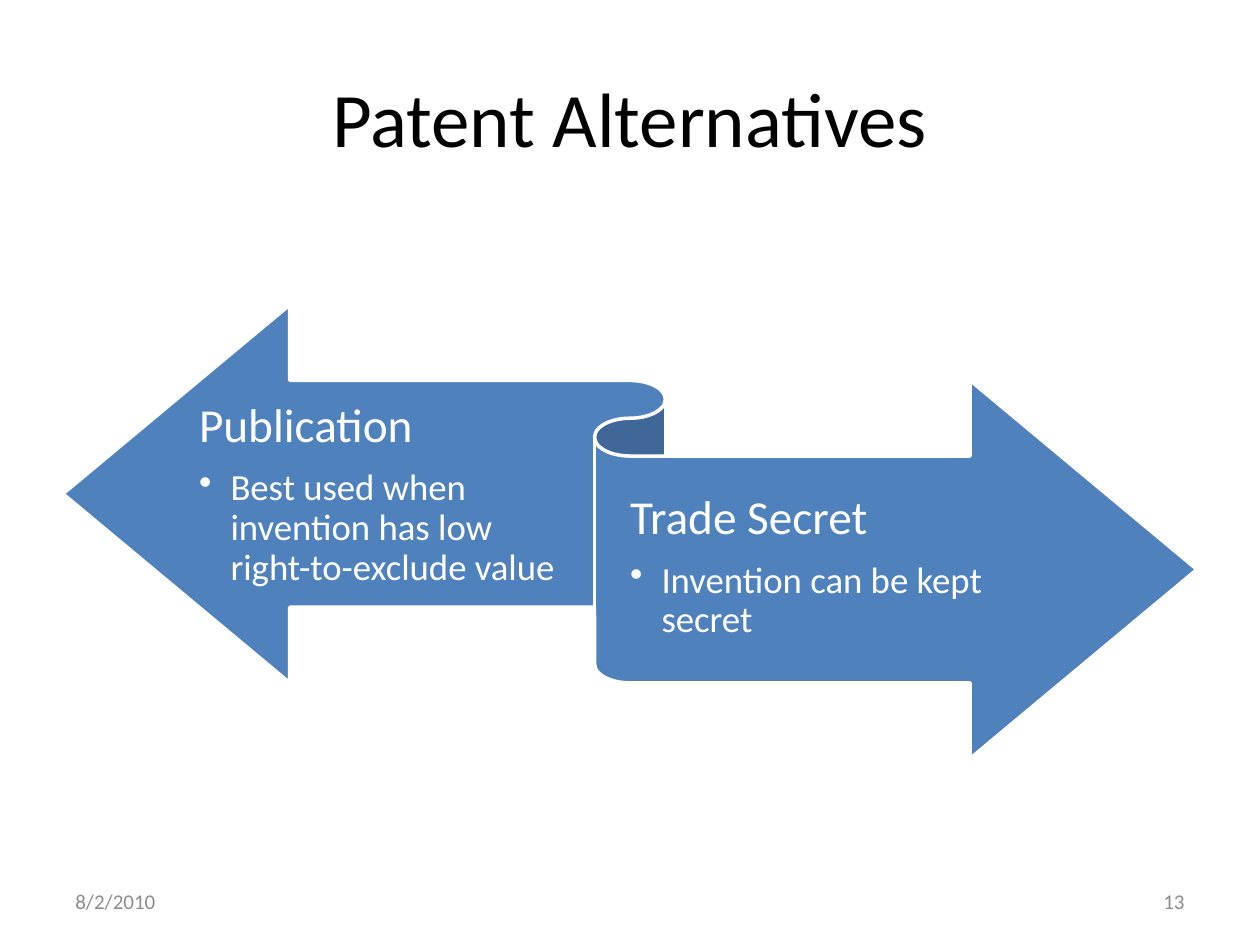
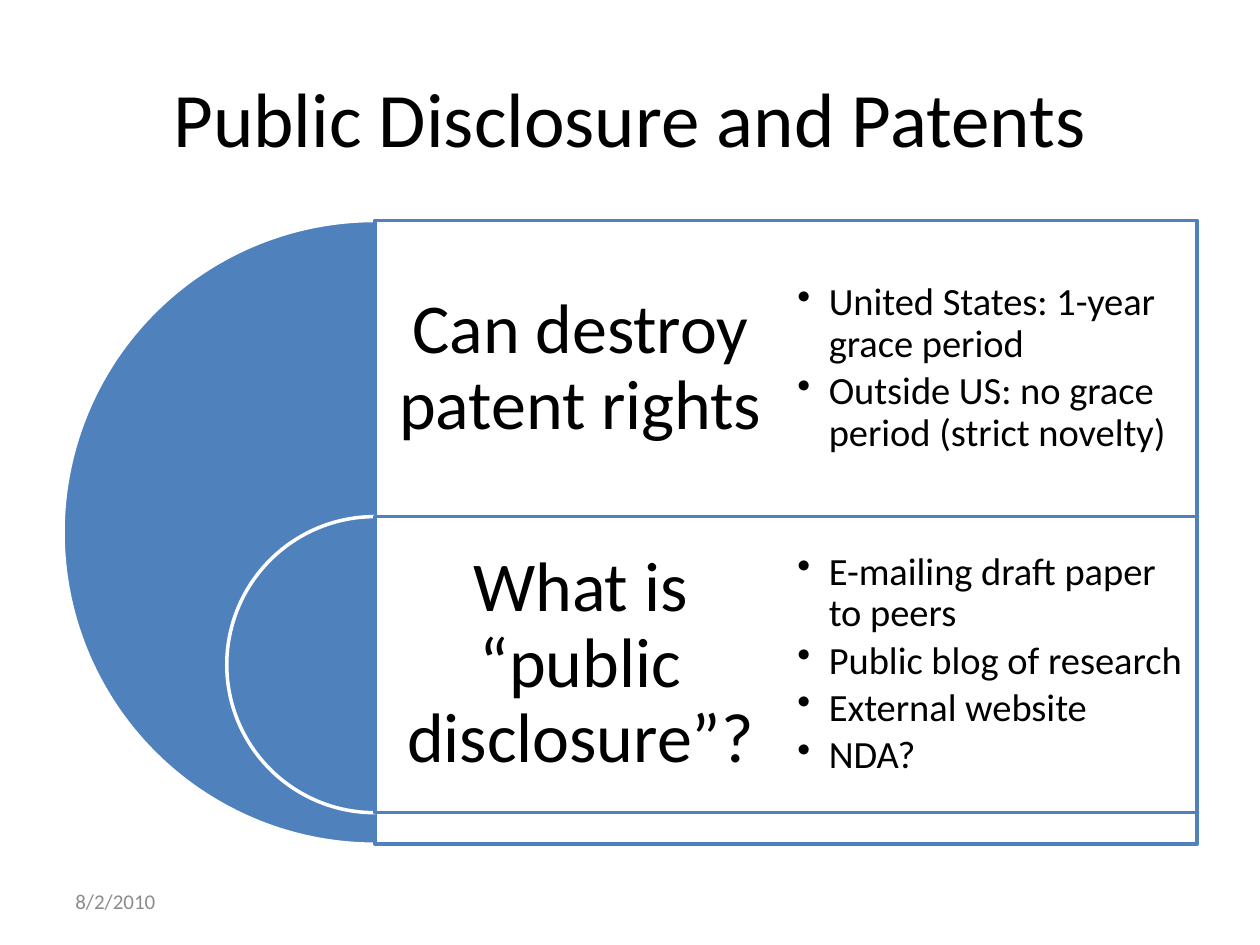
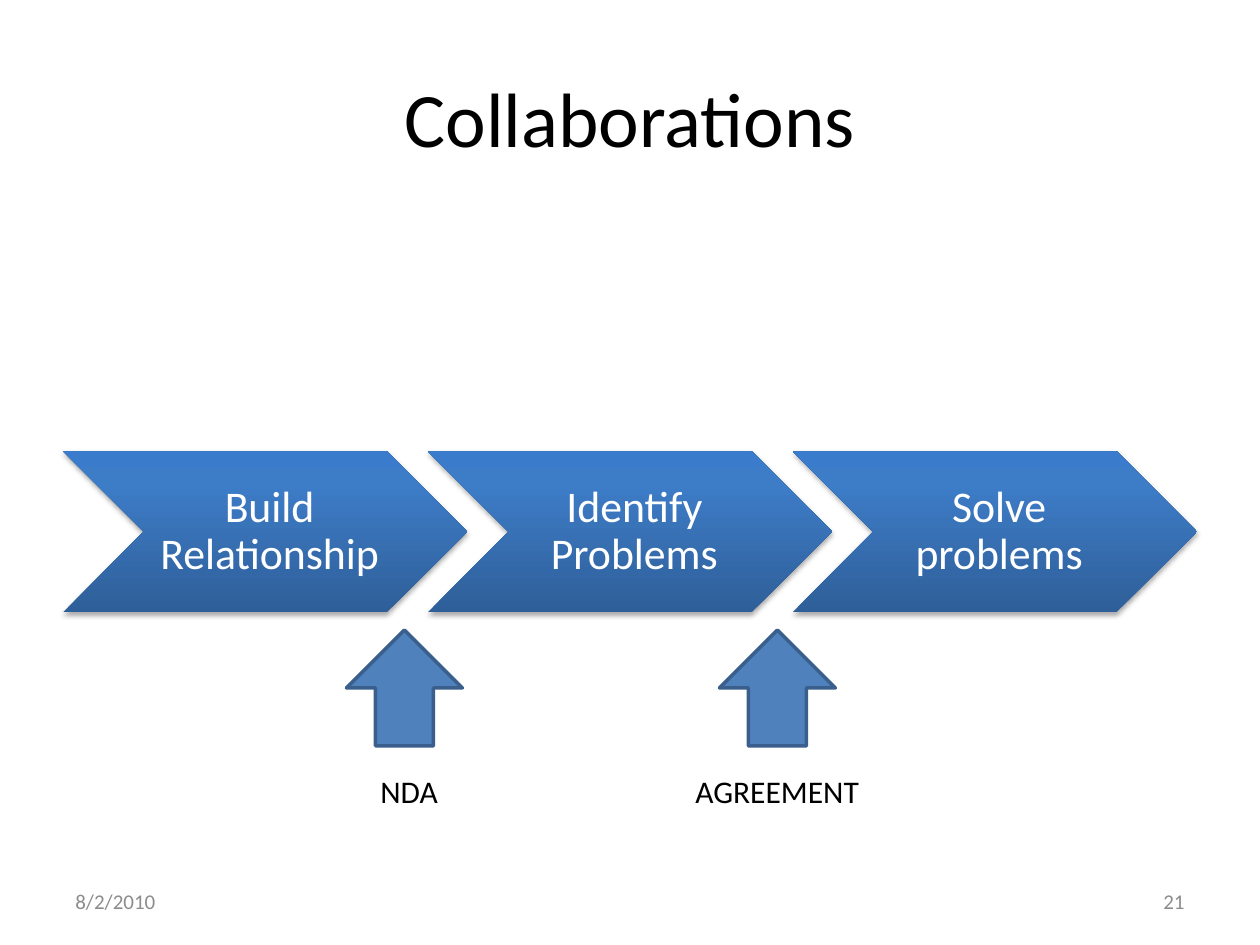
from lxml.etree import SubElement
from pptx import Presentation
from pptx.dml.color import RGBColor
from pptx.enum.shapes import MSO_SHAPE
from pptx.enum.text import MSO_ANCHOR, MSO_AUTO_SIZE, PP_ALIGN
from pptx.oxml.ns import qn
from pptx.util import Inches, Pt

FONT = "Calibri"
BLACK = RGBColor(0x00, 0x00, 0x00)
WHITE = RGBColor(0xFF, 0xFF, 0xFF)
GREY = RGBColor(0x8C, 0x8C, 0x8C)
BLUE = RGBColor(0x4F, 0x81, 0xBD)
DARK_BLUE = RGBColor(0x3A, 0x5F, 0x8C)
CHEVRON_STOPS = [
    (0, RGBColor(0x2F, 0x5F, 0x99)),
    (80, RGBColor(0x3D, 0x7C, 0xC7)),
    (100, RGBColor(0x3A, 0x7C, 0xCB)),
]
DATE = "8/2/2010"
BODY_LEFT, BODY_WIDTH = 0.5, 9
DIAGRAM_TOP, DIAGRAM_HEIGHT = 1.75, 4.95
HEADING_GAP, BULLET_GAP = 0.35, 0.15


def inches(box):
    return [Inches(length) for length in box]


def add_paragraph(frame, text, size=18, color=BLACK, align=PP_ALIGN.LEFT,
                  spacing=None, gap=0, bullet=False):
    """Fill the frame's first paragraph, or append one; gap is a share of size."""
    first = frame.paragraphs[0]
    paragraph = frame.add_paragraph() if first.runs else first
    if bullet:
        properties = paragraph._p.get_or_add_pPr()
        properties.set("marL", str(Inches(0.25)))
        properties.set("indent", str(-Inches(0.25)))
        SubElement(properties, qn("a:buChar")).set("char", "•")
    paragraph.alignment = align
    paragraph.line_spacing = spacing
    paragraph.space_after = Pt(round(size * gap, 1))
    run = paragraph.add_run()
    run.text = text
    run.font.name = FONT
    run.font.size = Pt(size)
    run.font.color.rgb = color


def add_frame(slide, box, insets=(0.1, 0.05, 0.1, 0.05), anchor=MSO_ANCHOR.MIDDLE,
              wrap=True):
    frame = slide.shapes.add_textbox(*inches(box)).text_frame
    frame.word_wrap = wrap
    frame.auto_size = MSO_AUTO_SIZE.NONE if wrap else MSO_AUTO_SIZE.SHAPE_TO_FIT_TEXT
    frame.vertical_anchor = anchor
    (frame.margin_left, frame.margin_top,
     frame.margin_right, frame.margin_bottom) = inches(insets)
    return frame


def add_shape(slide, kind, box, fill=None, line=None, opacity=100):
    shape = slide.shapes.add_shape(kind, *inches(box))
    shape.shadow.inherit = False
    if fill is not None:
        shape.fill.solid()
        shape.fill.fore_color.rgb = fill
        if opacity < 100:
            color = shape._element.spPr.find(qn("a:solidFill"))[0]
            SubElement(color, qn("a:alpha")).set("val", str(opacity * 1000))
    if line is None:
        shape.line.fill.background()
    else:
        shape.line.color.rgb = line
        shape.line.width = Pt(2)
    return shape


def add_slide(presentation, title, number=None):
    """Add a slide with the shared title, date and slide number."""
    slide = presentation.slides.add_slide(presentation.slide_layouts[6])
    add_paragraph(add_frame(slide, (BODY_LEFT, 0.3, BODY_WIDTH, 1.25)), title,
                  size=44, align=PP_ALIGN.CENTER)
    add_paragraph(add_frame(slide, (BODY_LEFT, 6.95, 2.33, 0.4)), DATE,
                  size=12, color=GREY)
    if number:
        add_paragraph(add_frame(slide, (7.17, 6.95, 2.33, 0.4)), number,
                      size=12, color=GREY, align=PP_ALIGN.RIGHT)
    return slide


def add_ribbon(slide, box, sides):
    left, top, width, height = box
    add_shape(slide, MSO_SHAPE.LEFT_RIGHT_RIBBON, box, BLUE, WHITE)
    text_boxes = [
        (left + 0.12 * width, top + 0.175 * height, 0.33 * width, 0.49 * height),
        (left + 0.5 * width, top + 0.335 * height, 0.39 * width, 0.49 * height),
    ]
    for text_box, (heading, detail) in zip(text_boxes, sides):
        frame = add_frame(slide, text_box, insets=(0, 0.1, 0, 0.11))
        add_paragraph(frame, heading, size=27, color=WHITE, spacing=0.9, gap=HEADING_GAP)
        add_paragraph(frame, detail, size=21, color=WHITE, spacing=0.9,
                      gap=BULLET_GAP, bullet=True)


def add_nested_bands(slide, box, bands):
    """Draw half discs with panels; each later disc sits lower inside the first."""
    left, top, width, height = box
    band_height = 2.35
    panel_left = left + height / 2
    column = (left + width - panel_left) / 2
    for index, (heading, bullets) in enumerate(bands):
        band_top = top + index * band_height
        diameter = band_height if index else height
        pie = add_shape(slide, MSO_SHAPE.PIE,
                        (panel_left - diameter / 2, band_top, diameter, diameter),
                        BLUE, WHITE)
        pie.adjustments[0], pie.adjustments[1] = 54, 162
        add_shape(slide, MSO_SHAPE.RECTANGLE,
                  (panel_left, band_top, 2 * column, diameter), WHITE, BLUE, opacity=90)
        frame = add_frame(slide, (panel_left, band_top, column, band_height), [0.17] * 4)
        add_paragraph(frame, heading, size=40, align=PP_ALIGN.CENTER, spacing=0.9,
                      gap=HEADING_GAP)
        frame = add_frame(slide, (panel_left + column, band_top, column, band_height),
                          [0.09] * 4)
        for bullet in bullets:
            add_paragraph(frame, bullet, size=22, spacing=0.9, gap=BULLET_GAP, bullet=True)


def style_chevron(shape):
    """Give the shape an upward gradient and a soft shadow below."""
    properties = shape._element.spPr
    gradient = SubElement(properties, qn("a:gradFill"), rotWithShape="1")
    stops = SubElement(gradient, qn("a:gsLst"))
    for position, color in CHEVRON_STOPS:
        stop = SubElement(stops, qn("a:gs"), pos=str(position * 1000))
        SubElement(stop, qn("a:srgbClr"), val=str(color))
    SubElement(gradient, qn("a:lin"), ang="16200000", scaled="0")
    properties.find(qn("a:prstGeom")).addnext(gradient)

    shadow = SubElement(properties.find(qn("a:effectLst")), qn("a:outerShdw"),
                        blurRad=str(Pt(3.1)), dist=str(Pt(1.8)), dir="5400000",
                        rotWithShape="0")
    color = SubElement(shadow, qn("a:srgbClr"), val=str(BLACK))
    SubElement(color, qn("a:alpha"), val="35000")


def add_process(slide, box, steps):
    left, top, width, height = box
    step_width = 3.21
    pitch = (width - step_width) / (len(steps) - 1)
    for index, step in enumerate(steps):
        step_left = left + index * pitch
        style_chevron(add_shape(slide, MSO_SHAPE.CHEVRON,
                                (step_left, top, step_width, height)))
        frame = add_frame(slide, (step_left + height / 2, top, step_width - height, height),
                          insets=(0.11, 0.04, 0.04, 0.04))
        add_paragraph(frame, step, size=25, color=WHITE, align=PP_ALIGN.CENTER,
                      spacing=0.9, gap=HEADING_GAP)


def add_milestone(slide, left, top, label, label_left, label_width):
    add_shape(slide, MSO_SHAPE.UP_ARROW, (left, top, 0.92, 0.92), BLUE, DARK_BLUE)
    frame = add_frame(slide, (label_left, top + 1.08, label_width, 0.4),
                      anchor=MSO_ANCHOR.TOP, wrap=False)
    add_paragraph(frame, label)


def main():
    presentation = Presentation()
    presentation.slide_width, presentation.slide_height = Inches(10), Inches(7.5)

    alternatives = add_slide(presentation, "Patent Alternatives", "13")
    add_ribbon(alternatives, (BODY_LEFT, 2.42, BODY_WIDTH, 3.6), [
        ("Publication", "Best used when invention has low right-to-exclude value"),
        ("Trade Secret", "Invention can be kept secret"),
    ])

    disclosure = add_slide(presentation, "Public Disclosure and Patents")
    add_nested_bands(disclosure, (BODY_LEFT, DIAGRAM_TOP, BODY_WIDTH, DIAGRAM_HEIGHT), [
        ("Can destroy patent rights",
         ["United States: 1-year grace period",
          "Outside US: no grace period (strict novelty)"]),
        ("What is “public disclosure”?",
         ["E-mailing draft paper to peers", "Public blog of research",
          "External website", "NDA?"]),
    ])

    collaborations = add_slide(presentation, "Collaborations", "21")
    add_process(collaborations, (BODY_LEFT, 3.58, BODY_WIDTH, 1.28),
                ["Build Relationship", "Identify Problems", "Solve problems"])
    add_milestone(collaborations, 2.75, 5, "NDA", 2.92, 0.66)
    add_milestone(collaborations, 5.71, 5, "AGREEMENT", 5.42, 1.51)

    presentation.save("out.pptx")


if __name__ == "__main__":
    main()
